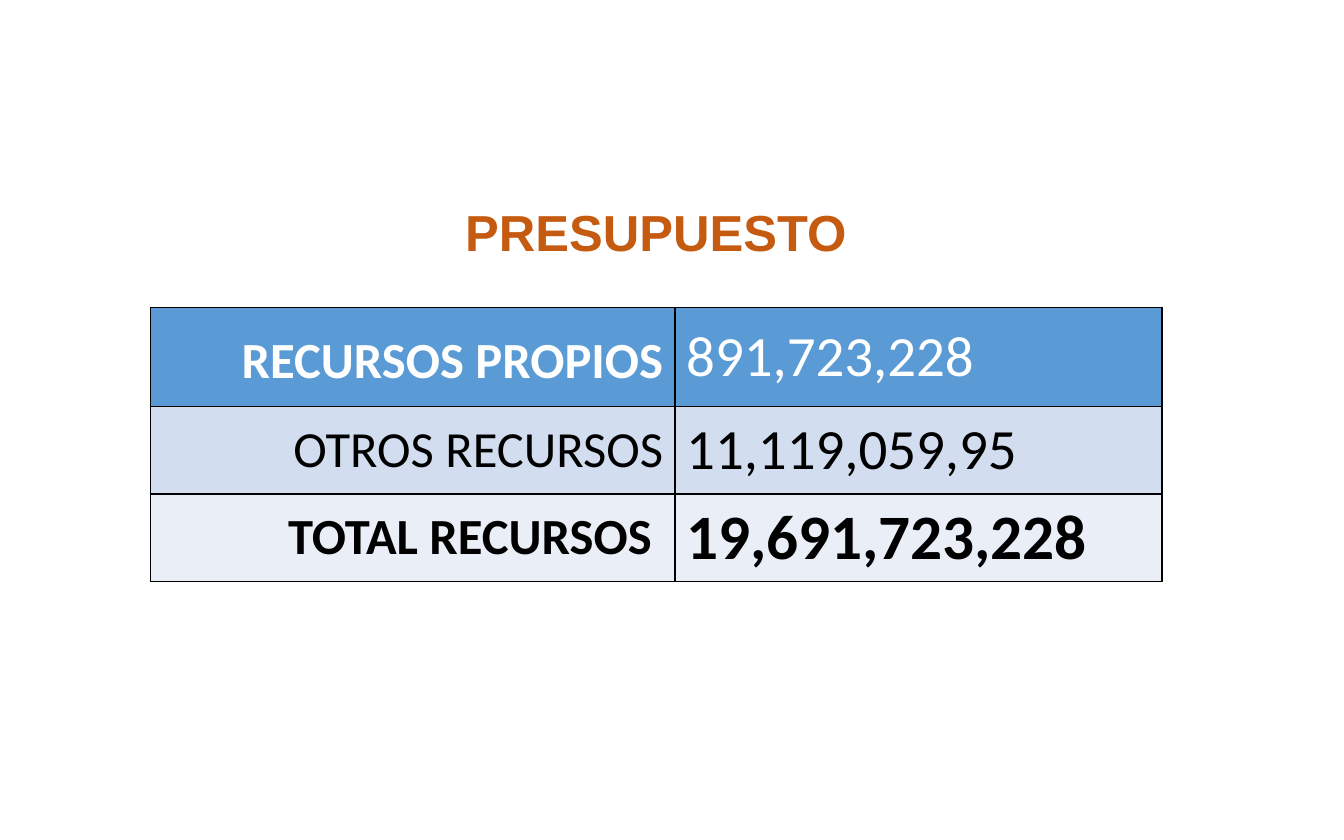
from dataclasses import dataclass

import pptx
import pptx.dml.color
import pptx.enum.text
import pptx.oxml
import pptx.oxml.ns
import pptx.slide
import pptx.table
import pptx.text.text
import pptx.util

PX = 9144  # 100 px to the inch
ALIGN = pptx.enum.text.PP_ALIGN
MIDDLE = pptx.enum.text.MSO_ANCHOR.MIDDLE


@dataclass(frozen=True)
class Theme:
    accent: str = "C55A11"
    header: str = "5B9BD5"
    band: str = "D2DEEF"
    light_band: str = "EAEFF7"
    border: str = "000000"
    ink: str = "000000"
    inverse: str = "FFFFFF"
    heading_font: str = "Arial"
    body_font: str = "Calibri"
    label_size: int = 32
    value_size: int = 36
    total_size: int = 40


@dataclass(frozen=True)
class Style:
    size: int
    color: str
    bold: bool = False
    font: str = "Calibri"
    align: ALIGN = ALIGN.LEFT
    spaced: bool = False


@dataclass(frozen=True)
class Entry:
    text: str
    style: Style


@dataclass(frozen=True)
class BudgetRow:
    label: Entry
    value: Entry
    fill: str
    height: int


THEME = Theme()


def label(text: str, color: str, bold: bool, spaced: bool = False) -> Entry:
    return Entry(text, Style(THEME.label_size, color, bold, THEME.body_font, ALIGN.RIGHT, spaced))


def value(text: str, size: int, color: str, bold: bool = False) -> Entry:
    return Entry(text, Style(size, color, bold, THEME.body_font))


TITLE = Entry("PRESUPUESTO", Style(THEME.label_size, THEME.accent, True,
                                   THEME.heading_font, ALIGN.CENTER, True))
BUDGET = [
    BudgetRow(label("RECURSOS PROPIOS", THEME.inverse, True, spaced=True),
              value("891,723,228", THEME.value_size, THEME.inverse), THEME.header, 87),
    BudgetRow(label("OTROS RECURSOS", THEME.ink, False),
              value("11,119,059,95", THEME.value_size, THEME.ink), THEME.band, 77),
    BudgetRow(label("TOTAL RECURSOS ", THEME.ink, True),
              value("19,691,723,228", THEME.total_size, THEME.ink, True), THEME.light_band, 77),
]
COLUMN_WIDTHS = (461, 428)


def px(length: int) -> pptx.util.Emu:
    return pptx.util.Emu(length * PX)


def rgb(color: str) -> pptx.dml.color.RGBColor:
    return pptx.dml.color.RGBColor.from_string(color)


def write(frame: pptx.text.text.TextFrame, entry: Entry) -> None:
    style = entry.style
    paragraph = frame.paragraphs[0]
    paragraph.alignment = style.align
    if style.spaced:
        paragraph.line_spacing = 1.15
        paragraph.space_after = pptx.util.Pt(10)
    run = paragraph.add_run()
    run.text = entry.text
    run.font.name = style.font
    run.font.size = pptx.util.Pt(style.size)
    run.font.bold = style.bold
    run.font.color.rgb = rgb(style.color)


def add_borders(cell: pptx.table._Cell) -> None:
    """Outline all four sides; border elements must precede the fill."""
    properties = cell._tc.get_or_add_tcPr()
    for index, side in enumerate(("lnL", "lnR", "lnT", "lnB")):
        properties.insert(index, pptx.oxml.parse_xml(
            f'<a:{side} {pptx.oxml.ns.nsdecls("a")} w="{pptx.util.Pt(1)}">'
            f'<a:solidFill><a:srgbClr val="{THEME.border}"/></a:solidFill></a:{side}>'))


def add_title(slide: pptx.slide.Slide) -> None:
    box = slide.shapes.add_textbox(px(28), px(164), px(1097), px(133))
    box.text_frame.word_wrap = True
    write(box.text_frame, TITLE)


def add_budget(slide: pptx.slide.Slide) -> None:
    height = sum(row.height for row in BUDGET)
    table = slide.shapes.add_table(len(BUDGET), len(COLUMN_WIDTHS), px(132), px(270),
                                   px(sum(COLUMN_WIDTHS)), px(height)).table
    for column, width in zip(table.columns, COLUMN_WIDTHS):
        column.width = px(width)
    for row, budget_row in zip(table.rows, BUDGET):
        row.height = px(budget_row.height)
        for cell, entry in zip(row.cells, (budget_row.label, budget_row.value)):
            cell.vertical_anchor = MIDDLE
            cell.margin_top = cell.margin_bottom = px(4)
            cell.fill.solid()
            cell.fill.fore_color.rgb = rgb(budget_row.fill)
            add_borders(cell)
            write(cell.text_frame, entry)


def main() -> None:
    presentation = pptx.Presentation()
    presentation.slide_width, presentation.slide_height = px(1181), px(738)
    slide = presentation.slides.add_slide(presentation.slide_layouts[6])
    add_title(slide)
    add_budget(slide)
    presentation.save("out.pptx")


if __name__ == "__main__":
    main()
